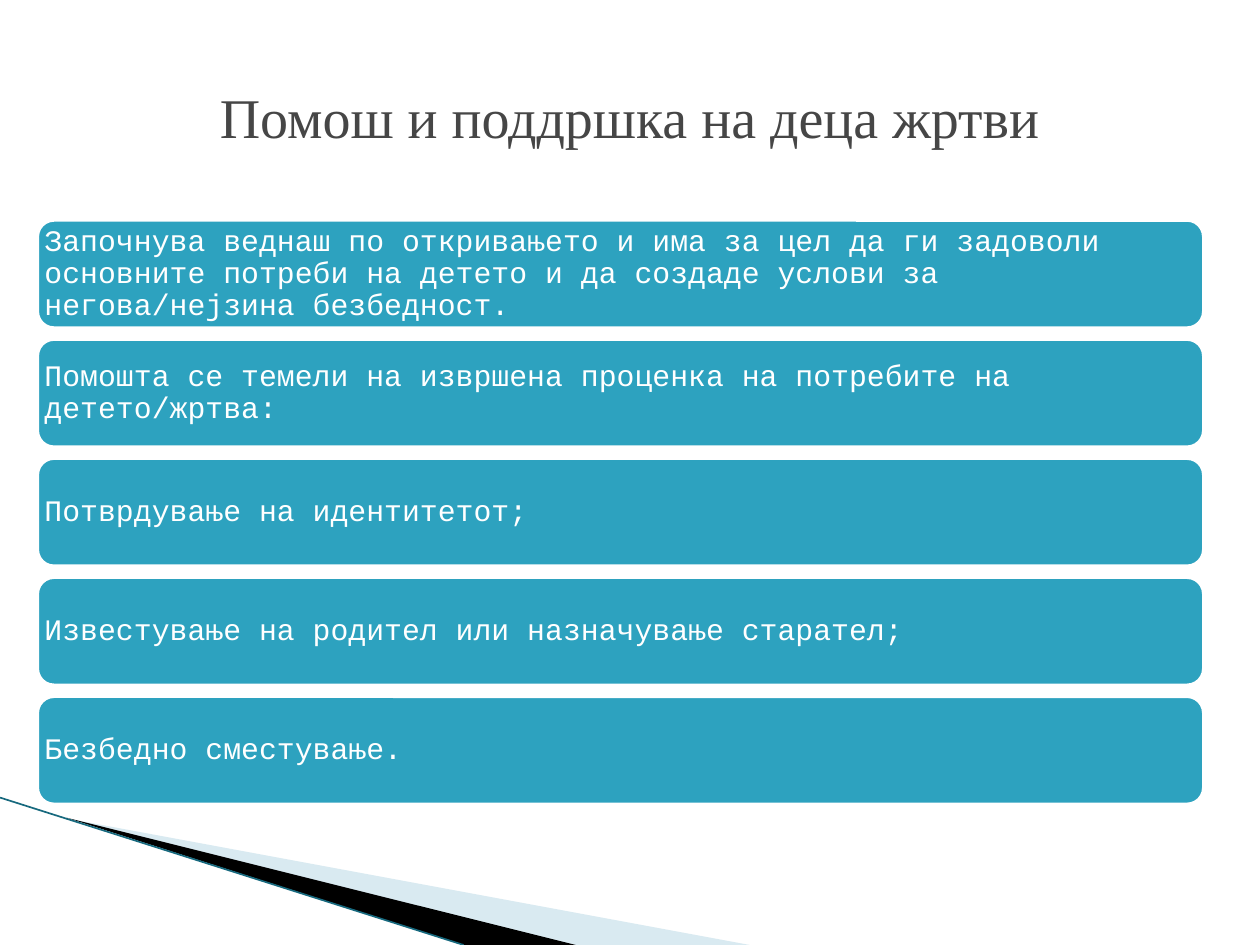
from dataclasses import dataclass

from lxml import etree
from pptx import Presentation
from pptx.dml.color import RGBColor
from pptx.enum.shapes import MSO_CONNECTOR, MSO_SHAPE
from pptx.enum.text import MSO_ANCHOR, PP_ALIGN
from pptx.oxml.ns import qn
from pptx.util import Inches, Pt

STRAIGHT = MSO_CONNECTOR.STRAIGHT
ROUNDED = MSO_SHAPE.ROUNDED_RECTANGLE
MIDDLE = MSO_ANCHOR.MIDDLE
LEFT, CENTER = PP_ALIGN.LEFT, PP_ALIGN.CENTER

TITLE = "Помош и поддршка на деца жртви"
STEPS = [
    "Започнува веднаш по откривањето и има за цел да ги задоволи основните "
    "потреби на детето и да создаде услови за негова/нејзина безбедност.",
    "Помошта се темели на извршена проценка на потребите на детето/жртва:",
    "Потврдување на идентитетот;",
    "Известување на родител или назначување старател;",
    "Безбедно сместување.",
]


@dataclass(frozen=True)
class Theme:
    title_font: str = "Times New Roman"
    body_font: str = "Courier New"
    title_size: float = 32
    body_size: float = 17
    title_color: str = "464646"
    card: str = "2DA2BF"
    white: str = "FFFFFF"
    pale: str = "A0CBDC"
    black: str = "000000"
    edge: str = "17697E"
    card_border: float = 4.33
    edge_width: float = 0.95


THEME = Theme()
WIDTH, HEIGHT = 10, 7.5
CARD_LEFT, CARD_TOP, CARD_WIDTH, CARD_HEIGHT = 0.28, 1.73, 9.29, 0.89
CARD_STEP = 0.945
WEDGES = [
    ([(0.55, 6.5), (5.95, HEIGHT), (4.56, HEIGHT)], THEME.pale, 40),
    ([(0.53, 6.49), (4.57, HEIGHT), (3.68, HEIGHT)], THEME.black, 100),
]
EDGE = [(0, 6.33), (3.68, HEIGHT)]


def rgb(value):
    return RGBColor.from_string(value)


def add_wedge(page, points, color, opacity):
    start, *rest = [(Inches(x), Inches(y)) for x, y in points]
    builder = page.shapes.build_freeform(*start)
    builder.add_line_segments(rest, close=True)
    wedge = builder.convert_to_shape()
    wedge.shadow.inherit = False
    wedge.fill.solid()
    wedge.fill.fore_color.rgb = rgb(color)
    wedge.line.fill.background()
    if opacity < 100:
        tint = wedge.fill._xPr.find(qn("a:solidFill"))[0]
        etree.SubElement(tint, qn("a:alpha"), val=str(opacity * 1000))


def add_edge(page):
    ends = [Inches(value) for point in EDGE for value in point]
    edge = page.shapes.add_connector(STRAIGHT, *ends)
    edge.line.color.rgb = rgb(THEME.edge)
    edge.line.width = Pt(THEME.edge_width)
    etree.SubElement(edge._element.spPr, qn("a:effectLst"))


def write(box, text, font, size, color, align, spacing):
    frame = box.text_frame
    frame.word_wrap = True
    frame.vertical_anchor = MIDDLE
    para = frame.paragraphs[0]
    para.alignment = align
    para.line_spacing = spacing
    span = para.add_run()
    span.text = text
    span.font.name = font
    span.font.size = Pt(size)
    span.font.color.rgb = rgb(color)


def add_card(page, row, text):
    top = CARD_TOP + row * CARD_STEP
    card = page.shapes.add_shape(
        ROUNDED, Inches(CARD_LEFT), Inches(top), Inches(CARD_WIDTH), Inches(CARD_HEIGHT)
    )
    card.shadow.inherit = False
    card.fill.solid()
    card.fill.fore_color.rgb = rgb(THEME.card)
    card.line.color.rgb = rgb(THEME.white)
    card.line.width = Pt(THEME.card_border)
    frame = card.text_frame
    frame.margin_left = frame.margin_right = Inches(0.03)
    frame.margin_top = frame.margin_bottom = Inches(0.03)
    write(card, text, THEME.body_font, THEME.body_size, THEME.white, LEFT, 0.9)


def main():
    deck = Presentation()
    deck.slide_width, deck.slide_height = Inches(WIDTH), Inches(HEIGHT)
    page = deck.slides.add_slide(deck.slide_layouts[6])
    for wedge in WEDGES:
        add_wedge(page, *wedge)
    add_edge(page)
    for row, text in enumerate(STEPS):
        add_card(page, row, text)
    title = page.shapes.add_textbox(
        Inches(WIDTH * 0.05), Inches(HEIGHT * 0.04), Inches(WIDTH * 0.9), Inches(1.25)
    )
    write(title, TITLE, THEME.title_font, THEME.title_size, THEME.title_color, CENTER, 1.0)
    deck.save("out.pptx")


if __name__ == "__main__":
    main()
